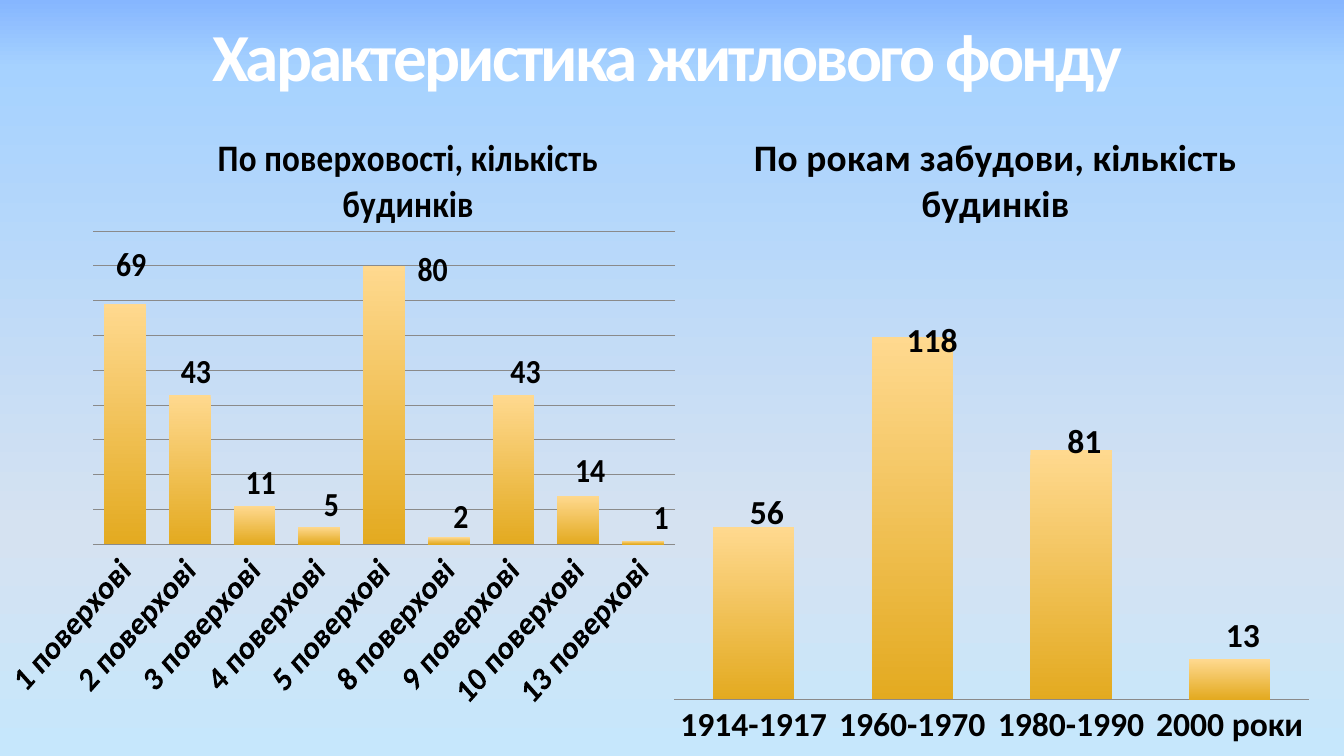
from lxml.etree import SubElement
from pptx import Presentation
from pptx.chart.data import CategoryChartData
from pptx.dml.color import RGBColor
from pptx.enum.chart import XL_CHART_TYPE, XL_TICK_LABEL_POSITION, XL_TICK_MARK
from pptx.enum.text import PP_ALIGN
from pptx.oxml.ns import qn
from pptx.util import Inches, Pt

COLORS = {"white": "FFFFFF", "black": "000000", "axis": "8A8A8A"}
SKY = [(0, "86B6FF"), (9, "A6D2FF"), (70, "D5E2F1"), (100, "C6E7FC")]
GOLD = [(0, "FFD98F"), (100, "E3AA20")]
FONT = "Calibri"

FLOORS = [(f"{n} поверхові", value, offset) for n, value, offset in [
    (1, 69, (0.01, -0.26)), (2, 43, (0.01, -0.16)), (3, 11, (0.01, -0.07)),
    (4, 5, (0.02, -0.05)), (5, 80, (0.08, -0.22)), (8, 2, (0.02, -0.04)),
    (9, 43, (0.02, -0.16)), (10, 14, (0.02, -0.08)), (13, 1, (0.03, -0.04))]]
YEARS = [("1914-1917", 56, (0.02, -0.16)), ("1960-1970", 118, (0.03, -0.28)),
         ("1980-1990", 81, (0.02, -0.21)), ("2000 роки", 13, (0.02, -0.07))]


def style_font(font, size, color="black"):
    """Apply the bold slide font in the given size and colour."""
    font.name, font.size, font.bold = FONT, Pt(size), True
    font.color.rgb = RGBColor.from_string(COLORS[color])


def fill_gradient(fill, stops):
    """Fill from top to bottom with (percent, colour) stops."""
    fill.gradient()
    fill.gradient_angle = 270
    stop_list = fill._xPr.find(qn("a:gradFill")).find(qn("a:gsLst"))
    for stop in list(stop_list):
        stop_list.remove(stop)
    for percent, color in stops:
        stop = SubElement(stop_list, qn("a:gs"), pos=str(percent * 1000))
        SubElement(stop, qn("a:srgbClr"), val=color)


def set_layout(parent, index, **values):
    """Place a chart part by fractions of the chart size."""
    for old in parent.findall(qn("c:layout")):
        parent.remove(old)
    layout = SubElement(parent, qn("c:layout"))
    manual = SubElement(layout, qn("c:manualLayout"))
    for name, value in values.items():
        SubElement(manual, qn(f"c:{name}"), val=str(value))
    parent.insert(index, layout)


def style_axes(chart, maximum, grid, rotation):
    """Show the categories, hide the values and set the scale."""
    cat, val = chart.category_axis, chart.value_axis
    cat.major_tick_mark = cat.minor_tick_mark = XL_TICK_MARK.NONE
    cat.tick_label_position = XL_TICK_LABEL_POSITION.NEXT_TO_AXIS
    style_font(cat.tick_labels.font, 18)
    if rotation:
        body = cat._element.find(qn("c:txPr")).find(qn("a:bodyPr"))
        body.set("rot", str(rotation * 60000))
    val.minimum_scale, val.maximum_scale = 0, maximum
    val.has_major_gridlines = grid
    lines = [cat.format.line]
    if grid:
        val.major_unit = 10
        lines.append(val.major_gridlines.format.line)
    for line in lines:
        line.color.rgb = RGBColor.from_string(COLORS["axis"])
        line.width = Pt(0.5)
    val.visible = False


def place_labels(series, rows):
    """Show each value at its own offset, without leader lines."""
    for i, (_, _, (dx, dy)) in enumerate(rows):
        label = series.points[i].data_label
        style_font(label.font, 18)
        set_layout(label._dLbl, 1, x=dx, y=dy)
    for leader in series._element.iter(qn("c:showLeaderLines")):
        leader.set("val", "0")


def add_column_chart(s, box, title, title_at, rows, plot, gap, maximum,
                     grid=False, rotation=0):
    """Add a gold column chart with individually placed value labels."""
    data = CategoryChartData()
    data.categories = [name for name, _, _ in rows]
    data.add_series("Series 1", [value for _, value, _ in rows])
    chart = s.shapes.add_chart(XL_CHART_TYPE.COLUMN_STACKED,
                               *map(Inches, box), data).chart
    chart.has_legend = False
    style_font(chart.font, 18)
    chart.has_title = True
    tf = chart.chart_title.text_frame
    tf.text = title
    style_font(tf.paragraphs[0].runs[0].font, 20)
    set_layout(chart.chart_title._element, 1, xMode="edge", yMode="edge",
               x=title_at[0], y=title_at[1])
    style_axes(chart, maximum, grid, rotation)
    bars = chart.plots[0]
    bars.gap_width, bars.overlap, bars.vary_by_categories = gap, 100, False
    series = bars.series[0]
    fill_gradient(series.format.fill, GOLD)
    series.data_labels.show_value = True
    style_font(series.data_labels.font, 18)
    place_labels(series, rows)
    x, y, w, h = plot
    set_layout(chart._chartSpace.chart.plotArea, 0, layoutTarget="inner",
               xMode="edge", yMode="edge", x=x, y=y, w=w, h=h)


def add_heading(s, text):
    """Add the centred slide heading with tight letter spacing."""
    box = map(Inches, (0.12, 0.06, 9.69, 1.03))
    tf = s.shapes.add_textbox(*box).text_frame
    tf.word_wrap = True
    tf.text = text
    p = tf.paragraphs[0]
    p.alignment = PP_ALIGN.CENTER
    r = p.runs[0]
    style_font(r.font, 36, "white")
    props = r._r.get_or_add_rPr()
    props.set("spc", "-150")
    props.set("kern", "0")


def main():
    """Build the housing stock slide."""
    prs = Presentation()
    prs.slide_width, prs.slide_height = Inches(10), Inches(10 * 9 / 16)
    s = prs.slides.add_slide(prs.slide_layouts[6])
    fill_gradient(s.background.fill, SKY)
    add_heading(s, "Характеристика житлового фонду")
    add_column_chart(s, (4.92, 0.92, 4.92, 4.71),
                     "По рокам забудови, кількість будинків", (0.13, 0),
                     YEARS, (0.02, 0.23, 0.96, 0.68), 95, 140)
    add_column_chart(s, (0.04, 0.92, 5.12, 4.57),
                     "По поверховості, кількість будинків", (0.21, -0.01),
                     FLOORS, (0.015, 0.175, 0.955, 0.51), 55, 90,
                     grid=True, rotation=-45)
    prs.save("out.pptx")


if __name__ == "__main__":
    main()
